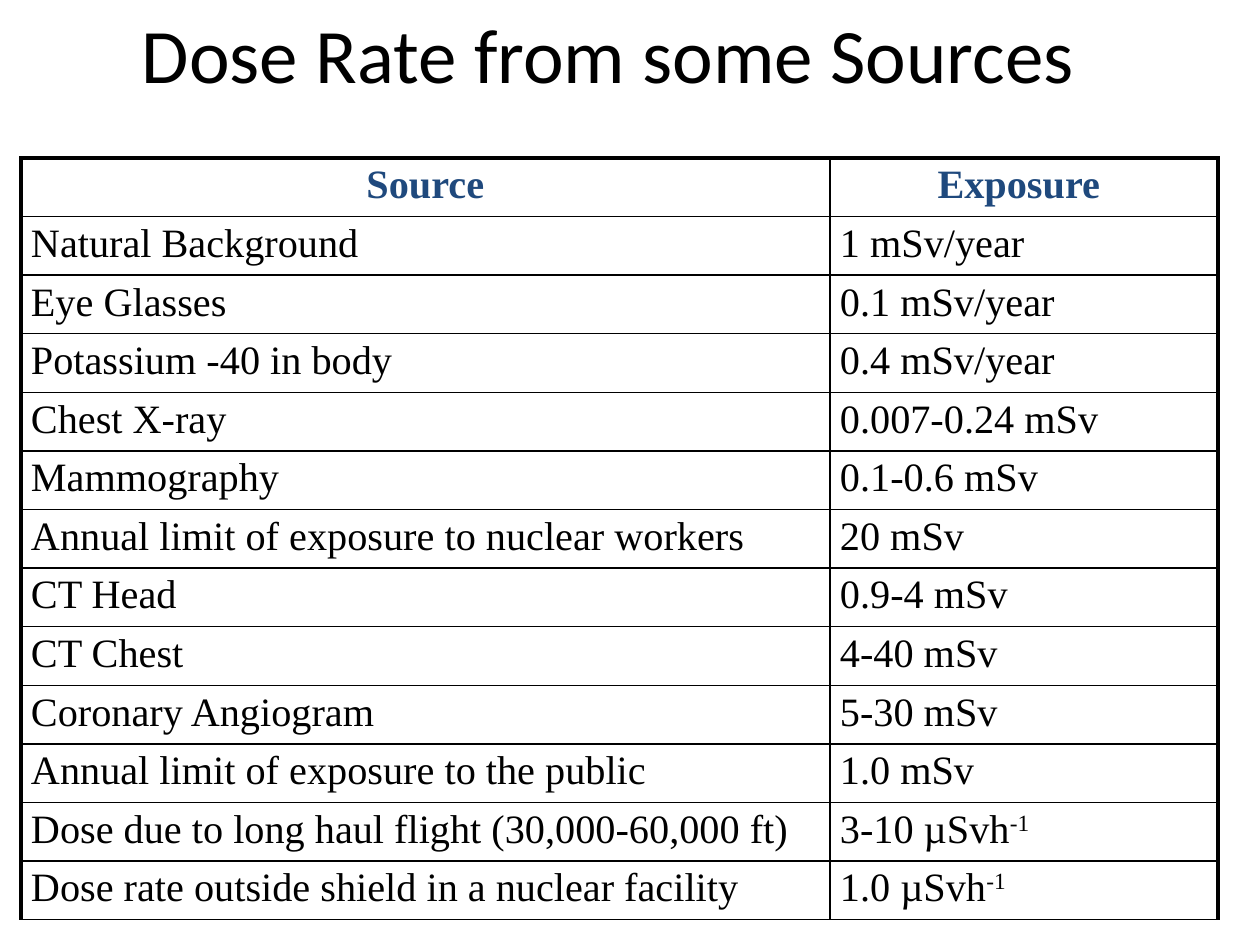
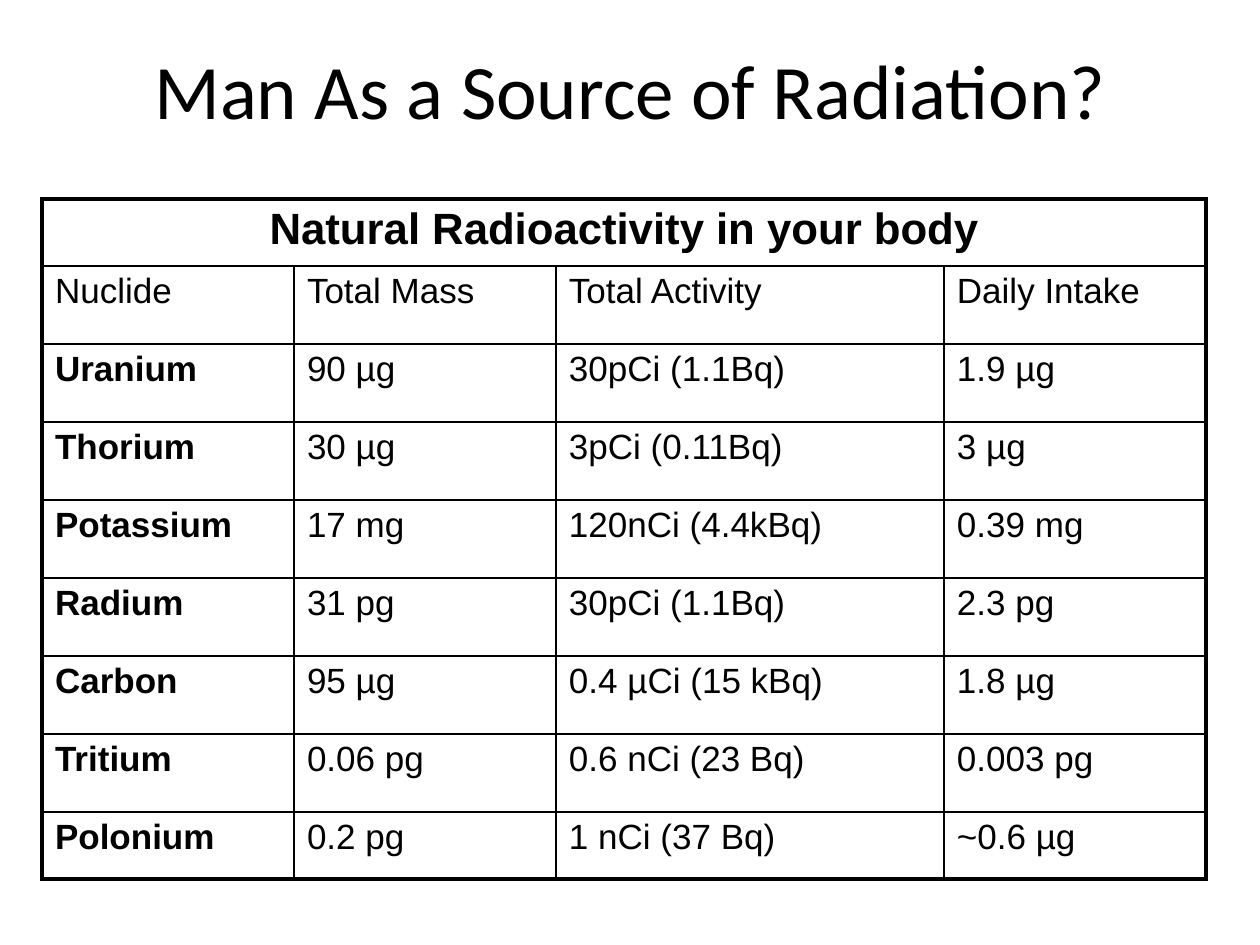
import pptx
import pptx.dml.color
import pptx.enum.text
import pptx.oxml.ns
import pptx.util
from lxml import etree

PX = 914400 / 126
BLACK, NAVY = "000000", "1F497D"
HEAVY, THIN = 2.25, 1
PLAIN_TABLE = "{2D5ABB26-0587-4C30-8999-92F81FD0307C}"
TITLE_ONLY = 5
ALIGN = pptx.enum.text.PP_ALIGN
ANCHOR = pptx.enum.text.MSO_ANCHOR

DOSES = [
    ["Source", "Exposure "],
    ["Natural Background", "1 mSv/year"],
    ["Eye Glasses", "0.1 mSv/year"],
    ["Potassium -40 in body", "0.4 mSv/year"],
    ["Chest X-ray", "0.007-0.24 mSv"],
    ["Mammography", "0.1-0.6 mSv"],
    ["Annual limit of exposure to nuclear workers", "20 mSv"],
    ["CT Head", "0.9-4 mSv"],
    ["CT Chest", "4-40 mSv"],
    ["Coronary Angiogram", "5-30 mSv"],
    ["Annual limit of exposure to the public", "1.0 mSv"],
    ["Dose due to long haul flight (30,000-60,000 ft)", "3-10 µSvh^-1"],
    ["Dose rate outside shield in a nuclear facility", "1.0 µSvh^-1"],
]

NUCLIDES = [
    ["Natural Radioactivity in your body"],
    ["Nuclide", "Total Mass", "Total Activity", "Daily Intake"],
    ["Uranium", "90 µg", "30pCi (1.1Bq)", "1.9 µg"],
    ["Thorium", "30 µg", "3pCi (0.11Bq)", "3 µg"],
    ["Potassium", "17 mg", "120nCi (4.4kBq)", "0.39 mg"],
    ["Radium", "31 pg", "30pCi (1.1Bq)", "2.3 pg"],
    ["Carbon", "95 µg", "0.4 µCi (15 kBq)", "1.8 µg"],
    ["Tritium", "0.06 pg", "0.6 nCi (23 Bq)", "0.003 pg"],
    ["Polonium", "0.2 pg", "1 nCi (37 Bq)", "~0.6 µg"],
]


def emu(px):
    return pptx.util.Emu(round(px * PX))


def rgb(color):
    return pptx.dml.color.RGBColor.from_string(color)


def write(frame, text, font="Calibri", size=44, color=BLACK, bold=False, align=ALIGN.LEFT):
    """Fill the frame with one paragraph; what follows a ^ is superscript."""
    paragraph = frame.paragraphs[0]
    paragraph.alignment = align
    for level, part in enumerate(text.split("^")):
        run = paragraph.add_run()
        run.text = part
        run.font.name = font
        run.font.size = pptx.util.Pt(size)
        run.font.bold = bold
        run.font.color.rgb = rgb(color)
        if level:
            run.font._element.set("baseline", "30000")


def draw_borders(cell, widths):
    """Draw the sides L, R, T and B whose width in points is not None."""
    properties = cell._tc.get_or_add_tcPr()
    for side, width in widths.items():
        if width is None:
            continue
        line = etree.SubElement(properties, pptx.oxml.ns.qn(f"a:ln{side}"),
                                w=str(pptx.util.Pt(width)))
        fill = etree.SubElement(line, pptx.oxml.ns.qn("a:solidFill"))
        etree.SubElement(fill, pptx.oxml.ns.qn("a:srgbClr"), val=BLACK)


class Deck:
    def __init__(self):
        self.presentation = pptx.Presentation()
        self.presentation.slide_width = emu(1260)
        self.presentation.slide_height = emu(945)
        self.slide = None

    def add_slide(self, title, left, top, anchor):
        layout = self.presentation.slide_layouts[TITLE_ONLY]
        self.slide = self.presentation.slides.add_slide(layout)
        heading = self.slide.shapes.title
        heading.left, heading.top = emu(left), emu(top)
        heading.width, heading.height = emu(1071), emu(158)
        heading.text_frame.vertical_anchor = anchor
        write(heading.text_frame, title, align=ALIGN.CENTER)

    def add_table(self, rows, left, top, columns, heights, margins, style, bottom=HEAVY):
        """Add a framed table; style(row, column) gives the text format of a cell.

        A row with a single text spans all columns.
        """
        frame = self.slide.shapes.add_table(len(rows), len(columns), emu(left), emu(top),
                                            emu(sum(columns)), emu(sum(heights)))
        table = frame.table
        table.first_row = table.horz_banding = False
        table._tbl.tblPr.find(pptx.oxml.ns.qn("a:tableStyleId")).text = PLAIN_TABLE
        for column, width in zip(table.columns, columns):
            column.width = emu(width)
        last_row, last_column = len(rows) - 1, len(columns) - 1
        for r, texts in enumerate(rows):
            table.rows[r].height = emu(heights[r])
            joined = len(texts) == 1
            if joined:
                table.cell(r, 0).merge(table.cell(r, last_column))
            inner = None if joined else THIN
            for c in range(len(columns)):
                cell = table.cell(r, c)
                draw_borders(cell, {
                    "L": HEAVY if c == 0 else inner,
                    "R": HEAVY if c == last_column or cell.is_merge_origin else inner,
                    "T": HEAVY if r == 0 else THIN,
                    "B": bottom if r == last_row else THIN,
                })
                cell.fill.background()
                cell.margin_left = cell.margin_right = emu(margins[0])
                cell.margin_top = cell.margin_bottom = emu(margins[1])
                if c < len(texts):
                    write(cell.text_frame, texts[c], **style(r, c))


def dose_style(row, column):
    body = dict(font="Times New Roman", size=23)
    return body if row else dict(body, color=NAVY, bold=True, align=ALIGN.CENTER)


def nuclide_style(row, column):
    if row == 0:
        return dict(font="Arial", size=25, bold=True, align=ALIGN.CENTER)
    return dict(font="Arial", size=20, bold=row > 1 and column == 0)


def main():
    deck = Deck()
    deck.add_slide("Dose Rate from some Sources", 73, 0, ANCHOR.TOP)
    deck.add_table(DOSES, 21, 158, [809, 388], [762 / len(DOSES)] * len(DOSES),
                   (10, 5), dose_style, bottom=THIN)

    deck.add_slide("Man As a Source of Radiation?", 95, 10, ANCHOR.MIDDLE)
    deck.add_table(NUCLIDES, 42, 199, [252, 262, 388, 262], [67] + [78] * 7 + [67],
                   (13, 6), nuclide_style)
    deck.presentation.save("out.pptx")


if __name__ == "__main__":
    main()
